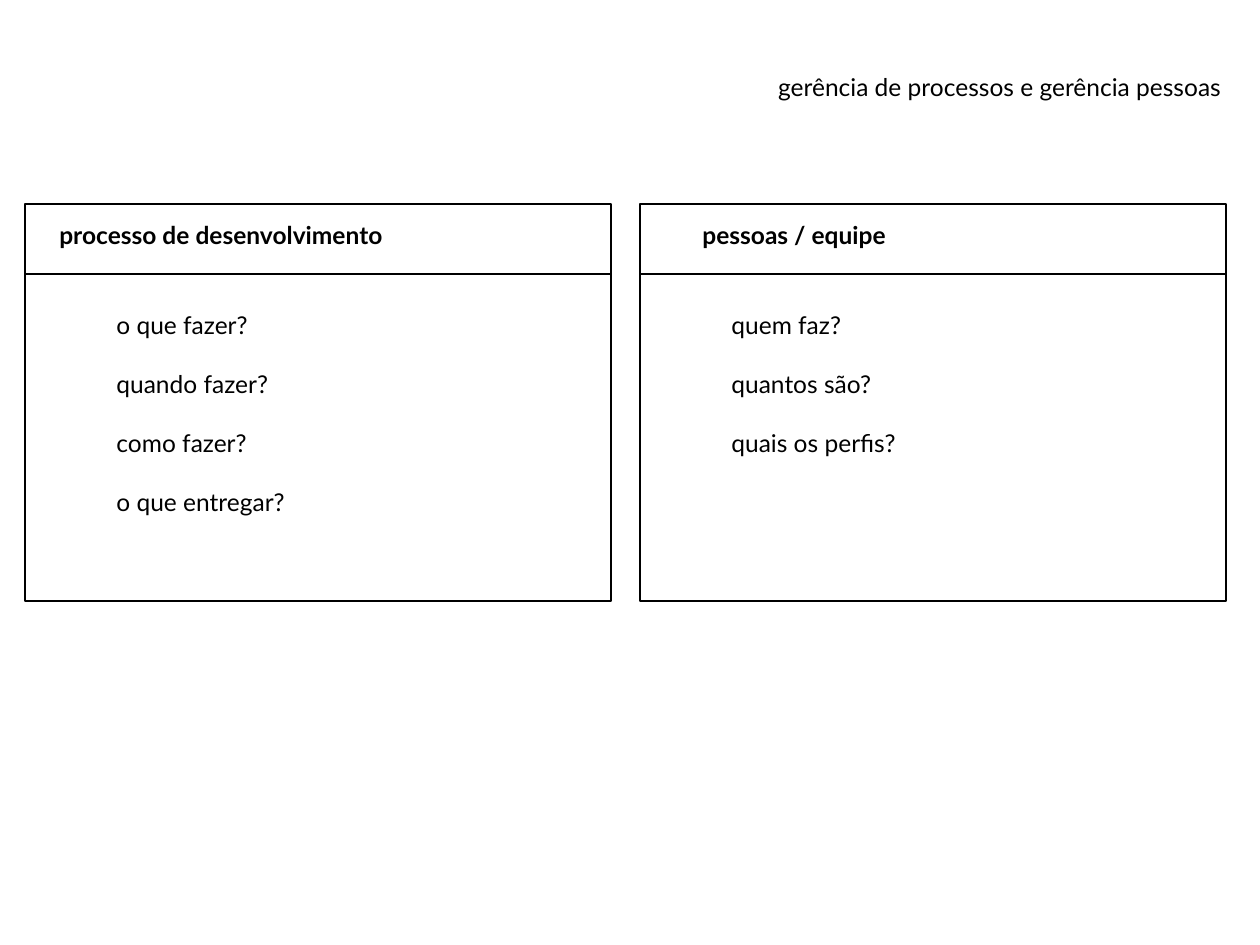
from pptx import Presentation
from pptx.dml.color import RGBColor
from pptx.enum.shapes import MSO_CONNECTOR, MSO_SHAPE
from pptx.enum.text import MSO_AUTO_SIZE, PP_ALIGN
from pptx.oxml.ns import qn
from pptx.util import Emu, Pt
from lxml.etree import SubElement

BLACK = RGBColor(0x00, 0x00, 0x00)
FONT = "Lato"
TEXT_SIZE = Pt(14)
LINE_WIDTH = Pt(0.75)
QUESTION_GAP = Pt(16.8)
PANEL_TOP, PANEL_WIDTH, PANEL_HEIGHT = 204, 586, 397
HEADER_HEIGHT = 70
PANELS = [
    (25, 22, 379, 515, "processo de desenvolvimento",
     ["o que fazer?", "quando fazer?", "como fazer?", "o que entregar?"]),
    (640, 50, 224, 437, "pessoas / equipe",
     ["quem faz?", "quantos são?", "quais os perfis?"]),
]


def px(length):
    return Emu(round(length * 914400 / 126))


def add_text(slide, left, top, width, height, lines, bold=None,
             align=PP_ALIGN.LEFT, gap=Pt(0), wrap=True):
    box = slide.shapes.add_textbox(px(left), px(top), px(width), px(height))
    frame = box.text_frame
    frame.word_wrap = wrap
    frame.auto_size = MSO_AUTO_SIZE.SHAPE_TO_FIT_TEXT
    for index, line in enumerate(lines):
        paragraph = frame.add_paragraph() if index else frame.paragraphs[0]
        paragraph.alignment = align
        if index < len(lines) - 1:
            paragraph.space_after = gap
        run = paragraph.add_run()
        run.text = line
        run.font.name = FONT
        run.font.size = TEXT_SIZE
        run.font.bold = bold
        run.font.color.rgb = BLACK


def add_frame(slide, left):
    frame = slide.shapes.add_shape(MSO_SHAPE.RECTANGLE, px(left), px(PANEL_TOP),
                                   px(PANEL_WIDTH), px(PANEL_HEIGHT))
    frame.shadow.inherit = False
    frame.fill.background()
    frame.line.color.rgb = BLACK
    frame.line.width = LINE_WIDTH


def add_divider(slide, left):
    y = px(PANEL_TOP + HEADER_HEIGHT)
    divider = slide.shapes.add_connector(MSO_CONNECTOR.STRAIGHT, px(left), y,
                                         px(left + PANEL_WIDTH), y)
    divider.line.color.rgb = BLACK
    divider.line.width = LINE_WIDTH
    SubElement(divider.element.spPr, qn("a:effectLst"))


def add_panel(slide, left, heading_indent, heading_width, questions_width,
              heading, questions):
    add_text(slide, left + heading_indent, PANEL_TOP + 10, heading_width, 43,
             [heading], bold=True, wrap=False)
    add_frame(slide, left)
    add_divider(slide, left)
    add_text(slide, left + 79, PANEL_TOP + 100, questions_width, 251,
             questions, gap=QUESTION_GAP)


def main():
    deck = Presentation()
    deck.slide_width, deck.slide_height = px(1260), px(945)
    slide = deck.slides.add_slide(deck.slide_layouts[6])
    add_text(slide, 530, 66, 704, 42, ["gerência de processos e gerência pessoas"],
             align=PP_ALIGN.RIGHT)
    for panel in PANELS:
        add_panel(slide, *panel)
    deck.save("out.pptx")


if __name__ == "__main__":
    main()
